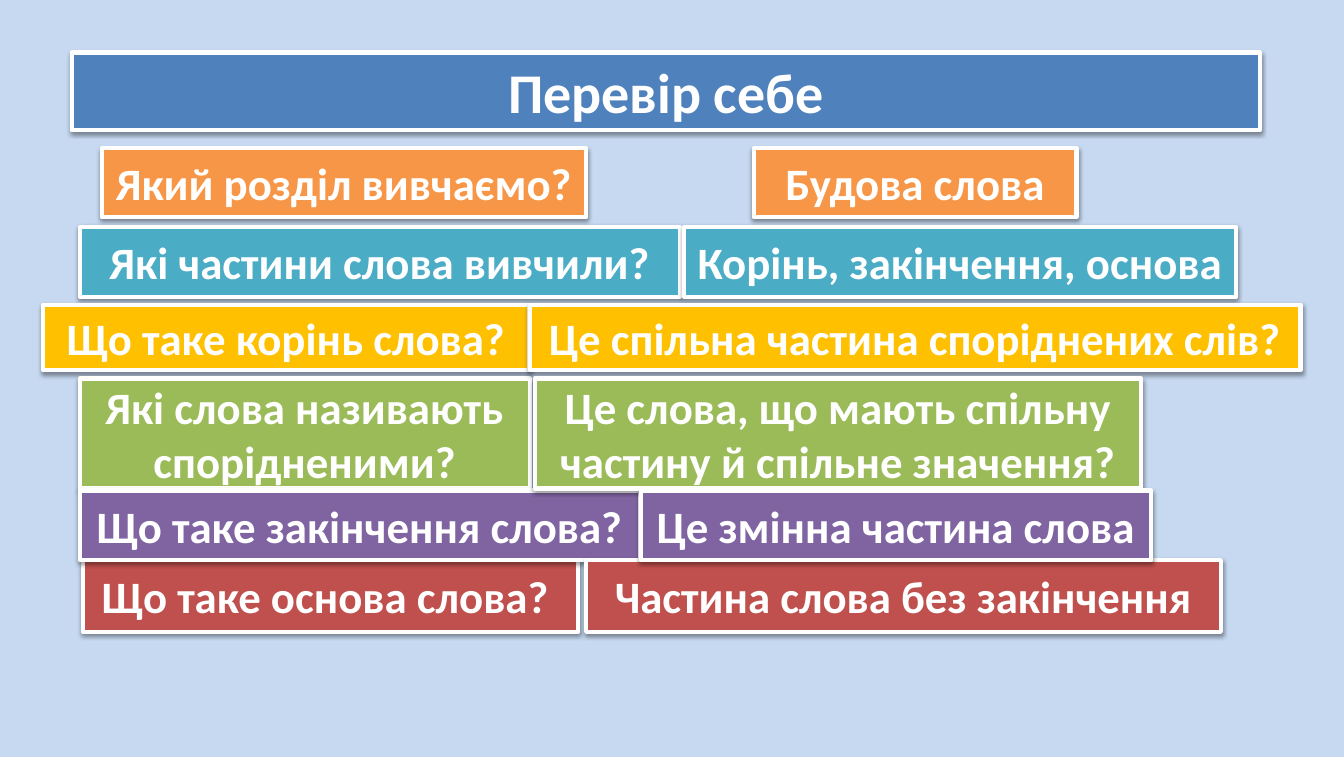
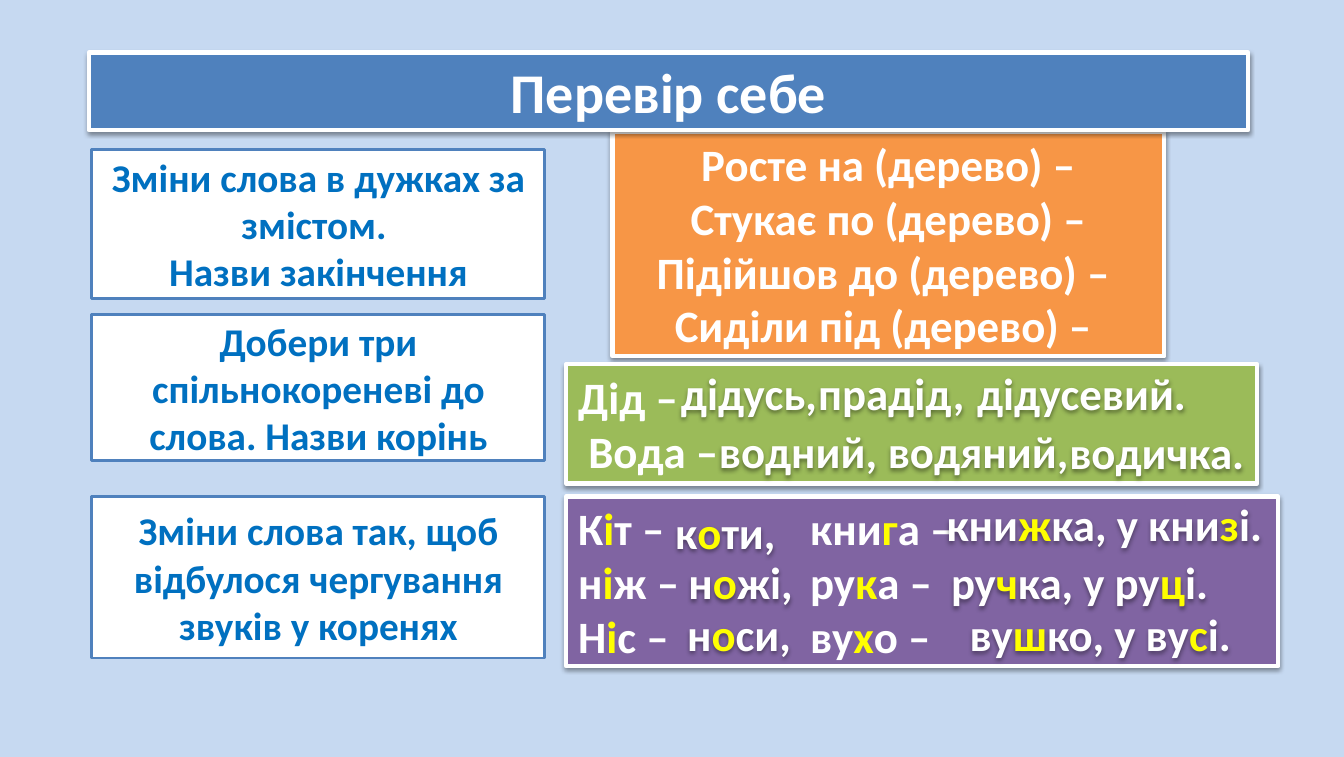
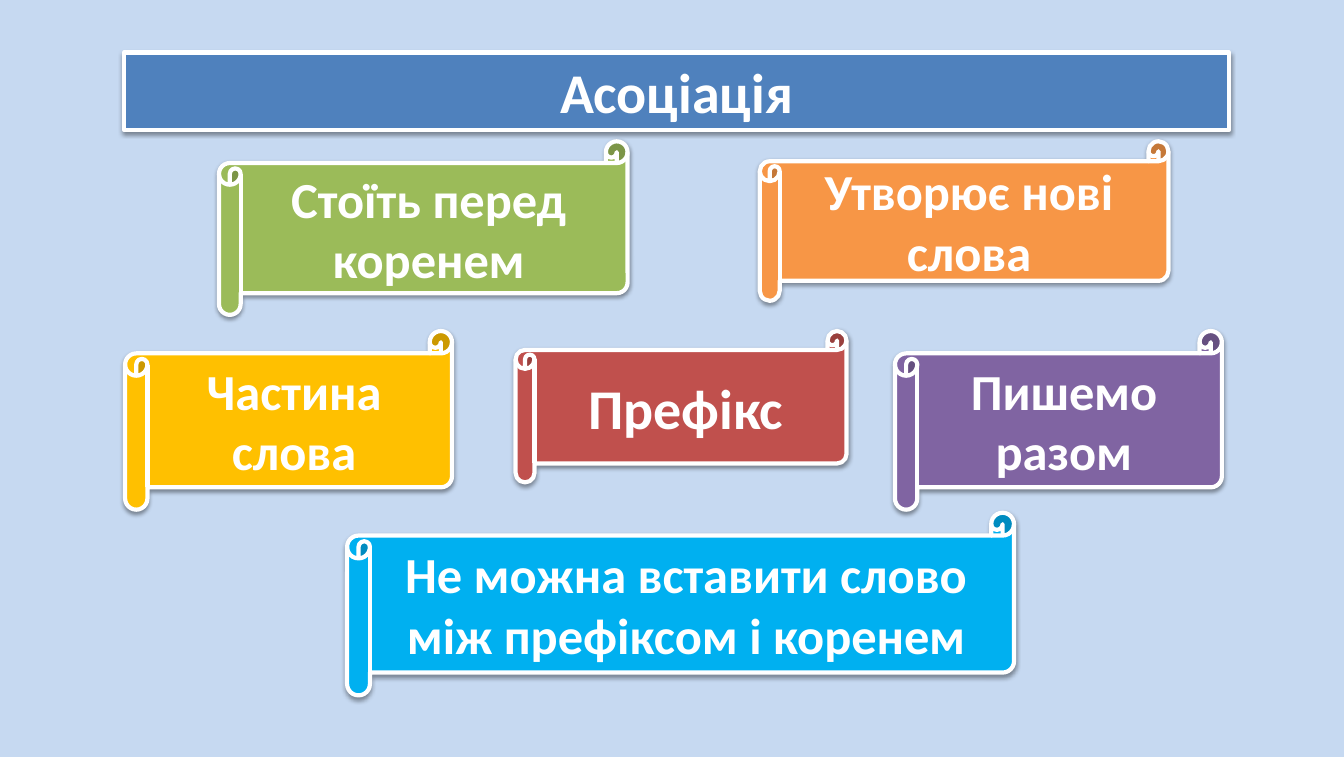
import lxml.etree
import pptx
import pptx.dml.color
import pptx.enum.shapes
import pptx.enum.text
import pptx.oxml.ns
import pptx.util

PX = 9144
WHITE, YELLOW, PAPER = "FFFFFF", "FFFF00", "C6D9F1"
BLUE, INK = "4F81BD", "0070C0"
ORANGE, TEAL, GOLD, GREEN = "F79646", "4BACC6", "FFC000", "9BBB59"
RED, PURPLE, SKY = "C0504D", "8064A2", "00B0F0"

ALIGN = pptx.enum.text.PP_ALIGN
PRESET = pptx.enum.shapes.MSO_SHAPE
qn = pptx.oxml.ns.qn


def px(length):
    return pptx.util.Emu(length * PX)


def colour(code):
    return pptx.dml.color.RGBColor.from_string(code)


class Deck:
    font = "Calibri"

    def __init__(self):
        self.show = pptx.Presentation()
        self.show.slide_width, self.show.slide_height = px(1332), px(750)
        backdrop = self.show.slide_master.background.fill
        backdrop.solid()
        backdrop.fore_color.rgb = colour(PAPER)
        self.slide = None

    def new_slide(self):
        self.slide = self.show.slides.add_slide(self.show.slide_layouts[5])

    def paint(self, shape, fill, edge=WHITE, width=3):
        shape.fill.solid()
        shape.fill.fore_color.rgb = colour(fill)
        shape.line.color.rgb = colour(edge)
        shape.line.width = pptx.util.Pt(width)

    def cast_shadow(self, shape):
        shape.shadow.inherit = False
        effects = shape.element.spPr.find(qn("a:effectLst"))
        outer = lxml.etree.SubElement(
            effects, qn("a:outerShdw"), blurRad="40000", dist="20000",
            dir="5400000", rotWithShape="0")
        black = lxml.etree.SubElement(outer, qn("a:srgbClr"), val="000000")
        lxml.etree.SubElement(black, qn("a:alpha"), val="38000")

    def set_text(self, shape, text, size, ink=WHITE, align=ALIGN.CENTER, inset=(12, 6), tab=0):
        frame = shape.text_frame
        frame.word_wrap = True
        frame.auto_size = pptx.enum.text.MSO_AUTO_SIZE.NONE
        frame.vertical_anchor = pptx.enum.text.MSO_ANCHOR.MIDDLE
        frame.margin_left = frame.margin_right = px(inset[0])
        frame.margin_top = frame.margin_bottom = px(inset[1])
        for index, line in enumerate(text.split("\n")):
            paragraph = frame.add_paragraph() if index else frame.paragraphs[0]
            paragraph.alignment = align
            if tab:
                stops = lxml.etree.SubElement(
                    paragraph._p.get_or_add_pPr(), qn("a:tabLst"))
                lxml.etree.SubElement(stops, qn("a:tab"), pos=str(tab * PX), algn="l")
            paragraph.font.name = self.font
            paragraph.font.size = pptx.util.Pt(size)
            paragraph.font.bold = True
            paragraph.font.color.rgb = colour(ink)
            for part, words in enumerate(line.split("*")):
                run = paragraph.add_run()
                run.text = words
                if part % 2:
                    run.font.color.rgb = colour(YELLOW)

    def title(self, text, left, width):
        heading = self.slide.shapes.title
        heading.left, heading.top, heading.width, heading.height = map(px, (left, 52, width, 77))
        outline = lxml.etree.Element(qn("a:prstGeom"), prst="roundRect")
        lxml.etree.SubElement(outline, qn("a:avLst"))
        heading.element.spPr.find(qn("a:xfrm")).addnext(outline)
        self.paint(heading, BLUE)
        self.cast_shadow(heading)
        self.set_text(heading, text, 40, inset=(10, 5))
        heading.element.getparent().append(heading.element)

    def panel(self, text, place, fill, size=32, preset=PRESET.RECTANGLE, **style):
        panel = self.slide.shapes.add_shape(preset, *map(px, place))
        self.paint(panel, fill)
        self.cast_shadow(panel)
        self.set_text(panel, text, size, **style)

    def scroll(self, text, place, fill, size=36):
        self.panel(text, place, fill, size, PRESET.HORIZONTAL_SCROLL)

    def task(self, text, top, height):
        card = self.slide.shapes.add_shape(
            PRESET.RECTANGLE, *map(px, (91, top, 449, height)))
        card.shadow.inherit = False
        self.paint(card, WHITE, BLUE, 2)
        self.set_text(card, text, 28, INK)

    def answer(self, text, left, top, width):
        answer = self.slide.shapes.add_textbox(*map(px, (left, top, width, 79)))
        answer.fill.background()
        self.cast_shadow(answer)
        self.set_text(answer, text, 32)


def review_questions(deck):
    deck.new_slide()
    deck.title("Перевір себе", 71, 1178)
    rows = [
        (ORANGE, 147, 68, (101, 480, "Який розділ вивчаємо?"), (747, 320, "Будова слова")),
        (TEAL, 225, 69, (79, 595, "Які частини слова вивчили?"),
         (678, 547, "Корінь, закінчення, основа")),
        (GOLD, 302, 65, (43, 481, "Що таке корінь слова?"),
         (525, 764, "Це спільна частина споріднених слів?")),
        (GREEN, 375, 109, (79, 446, "Які слова називають спорідненими?"),
         (530, 601, "Це слова, що мають спільну частину й спільне значення?")),
        (RED, 555, 71, (82, 491, "Що таке основа слова? "),
         (581, 629, "Частина слова без закінчення")),
        (PURPLE, 486, 69, (79, 555, "Що таке закінчення слова?"),
         (635, 506, "Це змінна частина слова")),
    ]
    for column in range(2):
        for fill, top, height, *pair in rows:
            left, width, text = pair[column]
            deck.panel(text, (left, top, width, height), fill)


def review_tasks(deck):
    deck.new_slide()
    deck.panel("Росте на (дерево) –\nСтукає по (дерево) –\n"
               "Підійшов до (дерево) – \nСиділи під (дерево) – ",
               (607, 131, 547, 222), ORANGE)
    deck.title("Перевір себе", 88, 1149)
    deck.panel("Дід –\n Вода –", (561, 361, 685, 118), GREEN, align=ALIGN.LEFT)
    deck.panel("К*і*т –\tкни*г*а –\nн*і*ж –\tру*к*а –\nН*і*с –\tву*х*о –",
               (561, 492, 706, 168), PURPLE, align=ALIGN.LEFT, tab=230)
    for text, top, height in [
        ("Зміни слова в дужках за змістом. \nНазви закінчення", 148, 148),
        ("Добери три спільнокореневі до слова. Назви корінь", 312, 144),
        ("Зміни слова так, щоб відбулося чергування звуків у коренях", 492, 160),
    ]:
        deck.task(text, top, height)
    for text, left, top, width in [
        ("дідусь, ", 661, 349, 173),
        ("прадід, ", 791, 349, 195),
        ("дідусевий. ", 954, 349, 236),
        ("водний, ", 700, 407, 182),
        ("водяний, ", 866, 407, 207),
        ("водичка. ", 1047, 408, 199),
        ("к*о*ти, ", 656, 487, 136),
        ("н*о*жі, ", 668, 537, 132),
        ("н*о*си, ", 657, 588, 161),
        ("кни*ж*ка, у кни*з*і. ", 924, 479, 351),
        ("ру*ч*ка, у ру*ц*і. ", 921, 537, 308),
        ("ву*ш*ко, у ву*с*і. ", 924, 588, 343),
    ]:
        deck.answer(text, left, top, width)


def prefix_associations(deck):
    deck.new_slide()
    deck.title("Асоціація", 123, 1095)
    deck.scroll("Утворює нові слова", (753, 140, 405, 158), ORANGE)
    deck.scroll("Префікс", (511, 328, 328, 150), RED, 40)
    deck.scroll("Стоїть перед коренем", (217, 140, 405, 172), GREEN)
    deck.scroll("Частина слова", (124, 328, 324, 177), GOLD)
    deck.scroll("Пишемо разом", (887, 328, 324, 177), PURPLE)
    deck.scroll("Не можна вставити слово між префіксом і коренем",
                (344, 508, 661, 181), SKY)


def main():
    deck = Deck()
    review_questions(deck)
    review_tasks(deck)
    prefix_associations(deck)
    deck.show.save("out.pptx")


if __name__ == "__main__":
    main()
